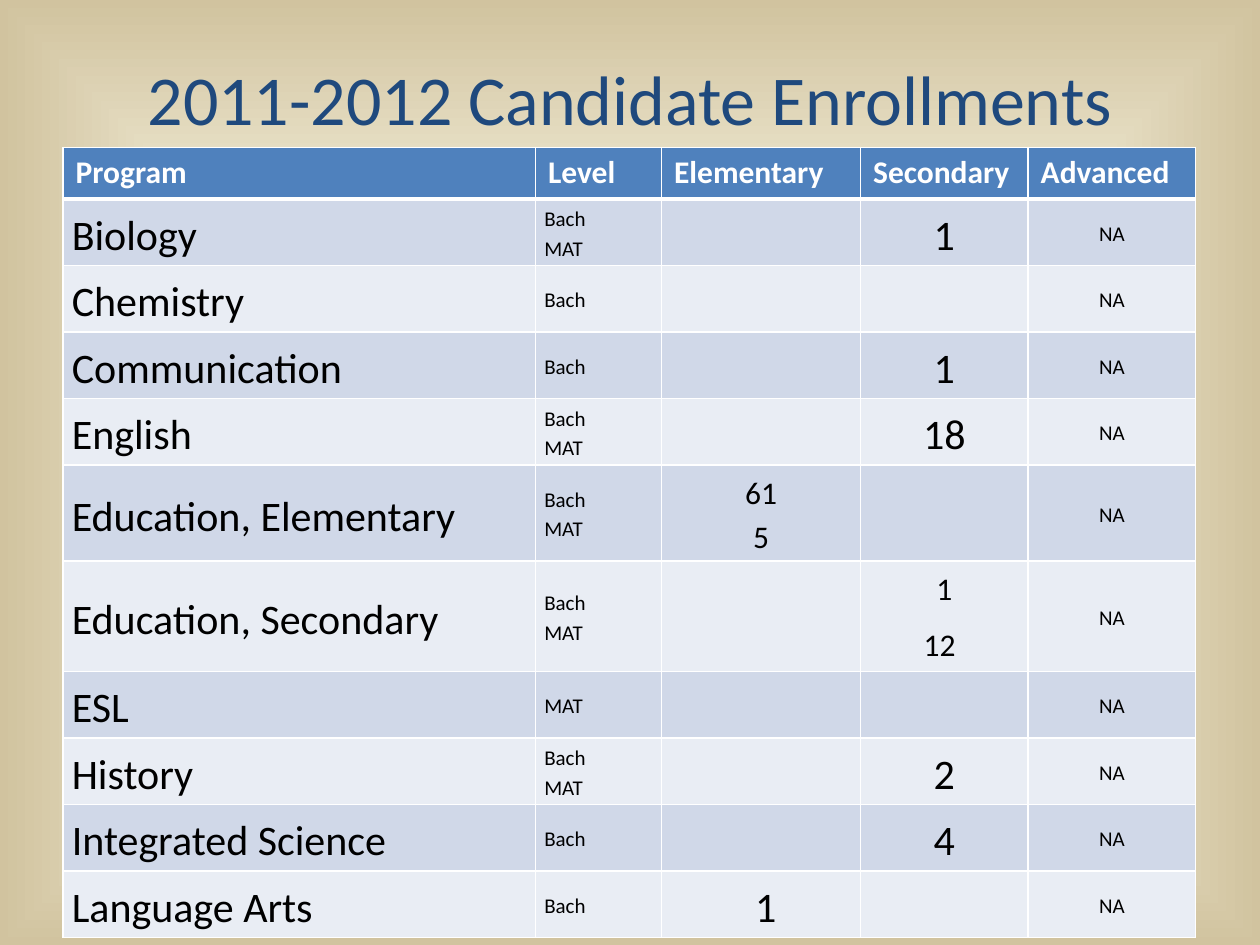
from lxml.etree import SubElement
from pptx import Presentation
from pptx.dml.color import RGBColor
from pptx.enum.text import MSO_ANCHOR, PP_ALIGN
from pptx.oxml.ns import qn
from pptx.util import Inches, Pt

FONT = "Calibri"
NAVY = RGBColor(0x1F, 0x49, 0x7D)
HEADER_BLUE = RGBColor(0x4F, 0x81, 0xBD)
BAND_DARK = RGBColor(0xD0, 0xD8, 0xE8)
BAND_LIGHT = RGBColor(0xE9, 0xED, 0xF4)
WHITE = RGBColor(0xFF, 0xFF, 0xFF)
BLACK = RGBColor(0x00, 0x00, 0x00)
BACKGROUND_STOPS = [
    (0, RGBColor(0xFF, 0xEF, 0xD1)),
    (52, RGBColor(0xF0, 0xEB, 0xD5)),
    (100, RGBColor(0xD1, 0xC3, 0x9F)),
]

HEADERS = ["Program", "Level", "Elementary", "Secondary", "Advanced"]
COLUMN_WIDTHS = [3.75, 1, 1.58, 1.33, 1.33]
HEADER_HEIGHT = 0.41
BOTH_LEVELS = ["Bach", "MAT"]
# Program, levels, elementary counts, secondary counts, row height
PROGRAMS = [
    ("Biology", BOTH_LEVELS, [], ["1"], 0.52),
    ("Chemistry", ["Bach"], [], [], 0.52),
    ("Communication", ["Bach"], [], ["1"], 0.52),
    ("English", BOTH_LEVELS, [], ["18"], 0.52),
    ("Education, Elementary", BOTH_LEVELS, ["61", "5"], [], 0.75),
    ("Education, Secondary", BOTH_LEVELS, [], ["1", "12 "], 0.86),
    ("ESL", ["MAT"], [], [], 0.52),
    ("History", BOTH_LEVELS, [], ["2"], 0.52),
    ("Integrated Science", ["Bach"], [], ["4"], 0.52),
    ("Language Arts", ["Bach"], [" 1"], [], 0.52),
]


def add_solid_color(parent, color):
    fill = SubElement(parent, qn("a:solidFill"))
    SubElement(fill, qn("a:srgbClr"), val=str(color))


def set_background(slide):
    """Fill the slide with a gradient that runs from the centre to the edges."""
    slide.background.fill.gradient()
    gradient = slide.element.find(".//" + qn("a:gradFill"))
    for child in list(gradient):
        gradient.remove(child)
    stops = SubElement(gradient, qn("a:gsLst"))
    for position, color in BACKGROUND_STOPS:
        stop = SubElement(stops, qn("a:gs"), pos=str(position * 1000))
        SubElement(stop, qn("a:srgbClr"), val=str(color))
    shading = SubElement(gradient, qn("a:path"), {"path": "shape"})
    SubElement(shading, qn("a:fillToRect"), l="50000", t="50000", r="50000", b="50000")


def add_run(paragraph, text, size, color, bold=False):
    run = paragraph.add_run()
    run.text = text
    run.font.name = FONT
    run.font.size = Pt(size)
    run.font.color.rgb = color
    run.font.bold = bold


def place_title(slide, left, top, width, height):
    title = slide.shapes.title
    title.left, title.top, title.width, title.height = left, top, width, height
    title.text_frame.vertical_anchor = MSO_ANCHOR.MIDDLE
    paragraph = title.text_frame.paragraphs[0]
    paragraph.alignment = PP_ALIGN.CENTER
    add_run(paragraph, "2011-2012 Candidate Enrollments", 40, NAVY)


def style_cell(cell, fill, top_width=1, bottom_width=1):
    properties = cell._tc.get_or_add_tcPr()
    for side, width in (("L", 1), ("R", 1), ("T", top_width), ("B", bottom_width)):
        line = SubElement(properties, qn("a:ln" + side), w=str(Pt(width)))
        add_solid_color(line, WHITE)
    cell.fill.solid()
    cell.fill.fore_color.rgb = fill


def fill_body_cell(cell, lines, size, alignment):
    cell.vertical_anchor = MSO_ANCHOR.MIDDLE
    cell.margin_left = cell.margin_right = Inches(0.07)
    cell.margin_top = cell.margin_bottom = Inches(0.03)
    for index, text in enumerate(lines):
        frame = cell.text_frame
        paragraph = frame.add_paragraph() if index else frame.paragraphs[0]
        paragraph.alignment = alignment
        paragraph.line_spacing = 1.15
        count = text.rstrip()
        add_run(paragraph, count, size, BLACK)
        if count != text:
            add_run(paragraph, text[len(count):], 24, BLACK)


def add_enrollment_table(slide, left, top, width, height):
    frame = slide.shapes.add_table(
        len(PROGRAMS) + 1, len(HEADERS), left, top, width, height
    )
    table = frame.table
    for column, column_width in zip(table.columns, COLUMN_WIDTHS):
        column.width = Inches(column_width)

    table.rows[0].height = Inches(HEADER_HEIGHT)
    for cell, header in zip(table.rows[0].cells, HEADERS):
        style_cell(cell, HEADER_BLUE, bottom_width=3)
        add_run(cell.text_frame.paragraphs[0], header, 18, WHITE, bold=True)

    for index, (program, levels, elementary, secondary, row_height) in enumerate(PROGRAMS):
        row = table.rows[index + 1]
        row.height = Inches(row_height)
        contents = [
            ([program], 24, PP_ALIGN.LEFT),
            (levels, 12, PP_ALIGN.LEFT),
            (elementary, 18 if len(elementary) > 1 else 24, PP_ALIGN.CENTER),
            (secondary, 18 if len(secondary) > 1 else 24, PP_ALIGN.CENTER),
            (["NA"], 12, PP_ALIGN.CENTER),
        ]
        band = BAND_LIGHT if index % 2 else BAND_DARK
        for cell, content in zip(row.cells, contents):
            style_cell(cell, band, top_width=1 if index else 3)
            fill_body_cell(cell, *content)


def main():
    presentation = Presentation()
    presentation.slide_width = Inches(10)
    presentation.slide_height = Inches(7.5)
    slide = presentation.slides.add_slide(presentation.slide_layouts[5])
    set_background(slide)
    place_title(slide, Inches(0.5), Inches(0.3), Inches(9), Inches(0.95))
    add_enrollment_table(slide, Inches(0.5), Inches(1.17), Inches(9), Inches(6.18))
    presentation.save("out.pptx")


if __name__ == "__main__":
    main()
